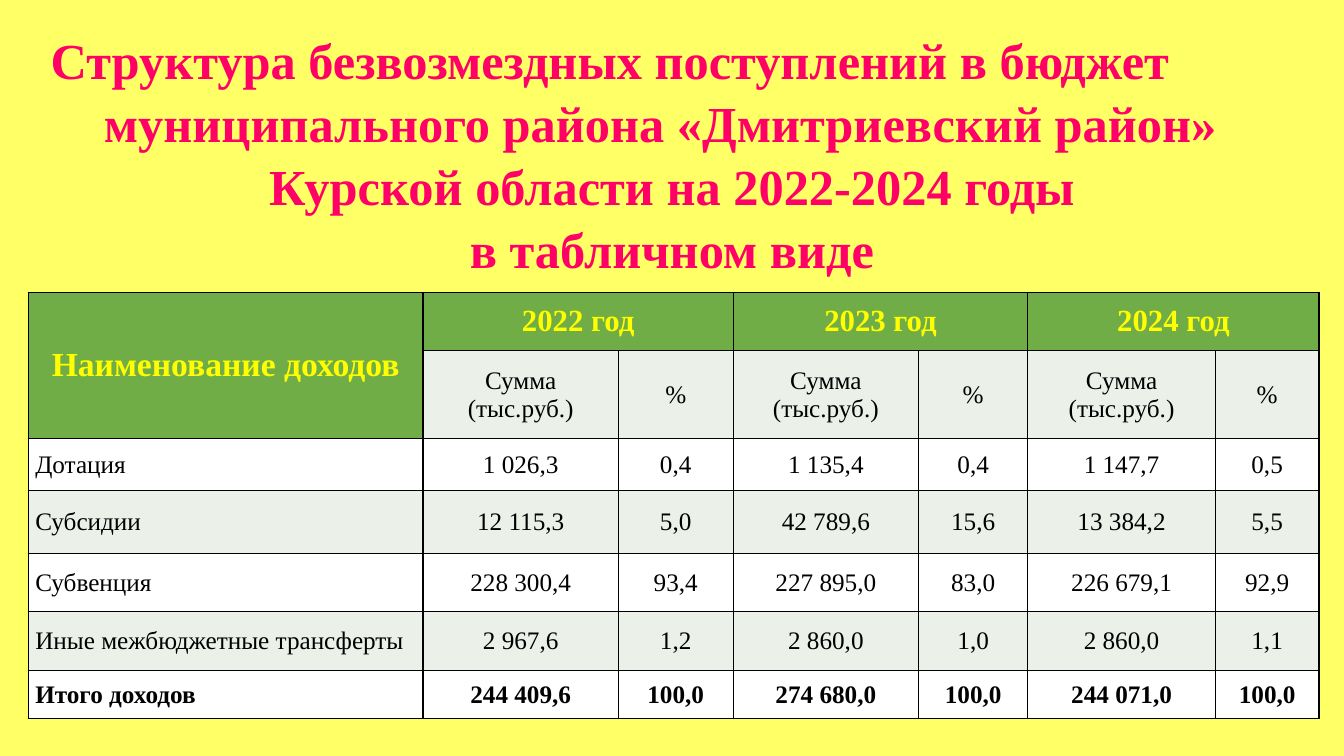
from lxml import etree
from pptx import Presentation
from pptx.dml.color import RGBColor
from pptx.enum.text import MSO_ANCHOR, MSO_AUTO_SIZE, PP_ALIGN
from pptx.oxml.ns import qn
from pptx.util import Pt

MIDDLE = MSO_ANCHOR.MIDDLE
LEFT = PP_ALIGN.LEFT
CENTER = PP_ALIGN.CENTER
NO_AUTOFIT = MSO_AUTO_SIZE.NONE
TITLE_ONLY = 5

FONT = "Times New Roman"
COLORS = {
    "background": "FFFF66",
    "title": "FF0066",
    "header": "70AD47",
    "header_text": "FFFF00",
    "band": "EBF1E9",
    "plain": "FFFFFF",
    "text": "000000",
    "border": "000000",
}

TITLE_LINES = [
    ("Структура безвозмездных поступлений в бюджет", LEFT, 29),
    ("муниципального района «Дмитриевский район»", LEFT, 67),
    ("Курской области на 2022-2024 годы", CENTER, 0),
    ("в табличном виде", CENTER, 0),
]
YEARS = ["2022 год", "2023 год", "2024 год"]
MEASURES = ["Сумма (тыс.руб.)", "%"]
INCOME_ROWS = [
    ["Дотация", "1 026,3", "0,4", "1 135,4", "0,4", "1 147,7", "0,5"],
    ["Субсидии", "12 115,3", "5,0", "42 789,6", "15,6", "13 384,2", "5,5"],
    ["Субвенция", "228 300,4", "93,4", "227 895,0", "83,0", "226 679,1", "92,9"],
    ["Иные межбюджетные трансферты", "2 967,6", "1,2", "2 860,0", "1,0", "2 860,0", "1,1"],
    ["Итого доходов", "244 409,6", "100,0", "274 680,0", "100,0", "244 071,0", "100,0"],
]
COLUMN_WIDTHS = [282, 139.5, 82, 132.5, 78, 134, 74]
ROW_HEIGHTS = [41.8, 62.6, 37.2, 44.8, 41.8, 41.8, 34.8]


def rgb(name):
    return RGBColor.from_string(COLORS[name])


def format_runs(paragraph, size, color, bold):
    for run in paragraph.runs:
        run.font.name = FONT
        run.font.size = Pt(size)
        run.font.bold = bold
        run.font.color.rgb = rgb(color)


def add_title(slide, left, top, width, height):
    title = slide.shapes.title
    title.left, title.top, title.width, title.height = map(Pt, (left, top, width, height))
    frame = title.text_frame
    frame.word_wrap = True
    frame.auto_size = NO_AUTOFIT
    frame.vertical_anchor = MIDDLE
    frame.text = "\n".join(text for text, _, _ in TITLE_LINES)
    for paragraph, (_, alignment, indent) in zip(frame.paragraphs, TITLE_LINES):
        paragraph.alignment = alignment
        paragraph.line_spacing = 1.04
        paragraph.space_before = Pt(0)
        properties = paragraph._p.get_or_add_pPr()
        properties.set("marL", str(Pt(indent)))
        properties.set("indent", "0")
        format_runs(paragraph, 36, "title", True)


def add_borders(cell):
    properties = cell._tc.get_or_add_tcPr()
    for side in ("lnL", "lnR", "lnT", "lnB"):
        line = etree.SubElement(properties, qn(f"a:{side}"), w=str(Pt(1)))
        fill = etree.SubElement(line, qn("a:solidFill"))
        etree.SubElement(fill, qn("a:srgbClr"), val=COLORS["border"])


def format_cell(cell, fill, size, color="text", bold=False, alignment=CENTER):
    add_borders(cell)
    cell.fill.solid()
    cell.fill.fore_color.rgb = rgb(fill)
    cell.vertical_anchor = MIDDLE
    for paragraph in cell.text_frame.paragraphs:
        paragraph.alignment = alignment
        format_runs(paragraph, size, color, bold)


def fill_header(table):
    table.cell(0, 0).text = "Наименование доходов"
    for index, year in enumerate(YEARS):
        column = 1 + 2 * index
        table.cell(0, column).text = year
        for offset, measure in enumerate(MEASURES):
            table.cell(1, column + offset).text = measure
    for column in range(len(COLUMN_WIDTHS)):
        size = 24 if column == 0 else 22
        format_cell(table.cell(0, column), "header", size, "header_text", True)
        format_cell(table.cell(1, column), "band" if column else "header", 18)
    table.cell(0, 0).merge(table.cell(1, 0))
    for column in range(1, len(COLUMN_WIDTHS), 2):
        table.cell(0, column).merge(table.cell(0, column + 1))


def fill_incomes(table):
    for index, values in enumerate(INCOME_ROWS):
        fill = "band" if index % 2 else "plain"
        is_total = index == len(INCOME_ROWS) - 1
        for column, value in enumerate(values):
            cell = table.cell(index + 2, column)
            cell.text = value
            cell.margin_left = cell.margin_right = Pt(5)
            cell.margin_top = cell.margin_bottom = Pt(0)
            alignment = CENTER if column else LEFT
            format_cell(cell, fill, 18, bold=is_total, alignment=alignment)


def add_income_table(slide, left, top, width, height):
    frame = slide.shapes.add_table(
        len(ROW_HEIGHTS), len(COLUMN_WIDTHS), Pt(left), Pt(top), Pt(width), Pt(height)
    )
    table = frame.table
    for column, column_width in zip(table.columns, COLUMN_WIDTHS):
        column.width = Pt(column_width * width / sum(COLUMN_WIDTHS))
    for row, row_height in zip(table.rows, ROW_HEIGHTS):
        row.height = Pt(row_height * height / sum(ROW_HEIGHTS))
    fill_header(table)
    fill_incomes(table)


def main():
    presentation = Presentation()
    presentation.slide_width = Pt(960)
    presentation.slide_height = Pt(540)
    slide = presentation.slides.add_slide(presentation.slide_layouts[TITLE_ONLY])
    slide.background.fill.solid()
    slide.background.fill.fore_color.rgb = rgb("background")
    add_title(slide, 0, 17.5, 960, 183)
    add_income_table(slide, 20.2, 208.8, 922, 304.8)
    presentation.save("out.pptx")


if __name__ == "__main__":
    main()
